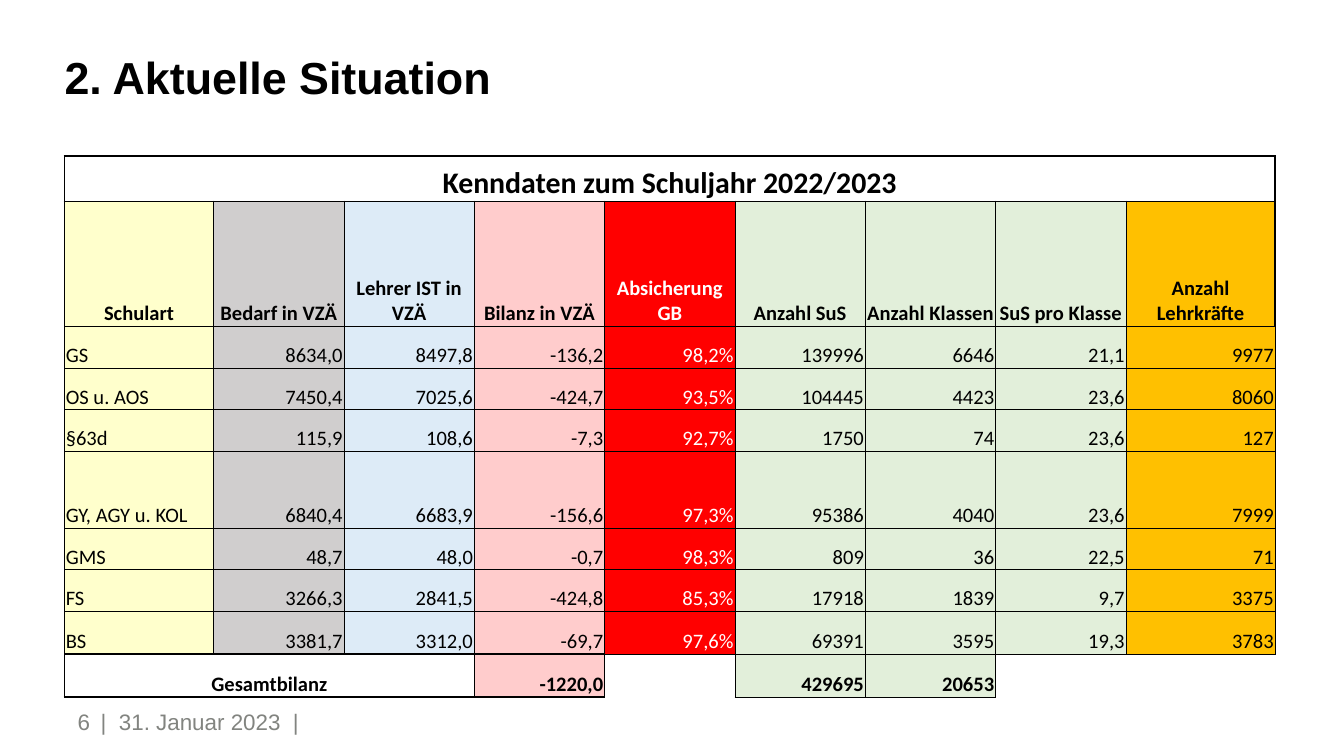
from lxml import etree
from pptx import Presentation
from pptx.dml.color import RGBColor
from pptx.enum import text
from pptx.oxml.ns import qn
from pptx.util import Inches, Pt

BLACK = RGBColor(0x00, 0x00, 0x00)
WHITE = RGBColor(0xFF, 0xFF, 0xFF)
GRAY = RGBColor(0x82, 0x84, 0x80)
CREAM = RGBColor(0xFF, 0xFF, 0xCC)
SILVER = RGBColor(0xD0, 0xCE, 0xCE)
BLUE = RGBColor(0xDD, 0xEB, 0xF7)
PINK = RGBColor(0xFF, 0xCC, 0xCC)
RED = RGBColor(0xFF, 0x00, 0x00)
GREEN = RGBColor(0xE2, 0xEF, 0xDA)
GOLD = RGBColor(0xFF, 0xC0, 0x00)

LEFT, MID, RIGHT = (text.PP_ALIGN.LEFT, text.PP_ALIGN.CENTER,
                    text.PP_ALIGN.RIGHT)
BOTTOM = text.MSO_ANCHOR.BOTTOM
MIDDLE = text.MSO_ANCHOR.MIDDLE


def write(frame, words, face, size, color, bold, align):
    """Set the text of a frame and format its run."""
    frame.text = words
    par = frame.paragraphs[0]
    par.alignment = align
    for run in par.runs:
        run.font.name = face
        run.font.size = Pt(size)
        run.font.color.rgb = color
        run.font.bold = bold


def edge(cell, sides):
    """Draw cell borders; sides maps L, R, T, B to a width in points."""
    props = cell._tc.get_or_add_tcPr()
    for side in "LRTB":
        line = etree.SubElement(props, qn("a:ln" + side))
        if not sides[side]:
            etree.SubElement(line, qn("a:noFill"))
            continue
        line.set("w", str(int(Pt(sides[side]))))
        fill = etree.SubElement(line, qn("a:solidFill"))
        etree.SubElement(fill, qn("a:srgbClr"), val=str(BLACK))


# Slide in 16:9
prs = Presentation()
prs.slide_width = Inches(10)
prs.slide_height = Inches(10 * 9 / 16)
slide = prs.slides.add_slide(prs.slide_layouts[6])

# Title and footer
labels = [
    ("2. Aktuelle Situation", 0.48, 0.36, 7.28, 0.41, 24, BLACK, True, LEFT, BOTTOM),
    ("|  31. Januar 2023  |", 0.75, 5.11, 4.96, 0.52, 12, GRAY, False, LEFT, MIDDLE),
    ("6", 0, 5.11, 0.67, 0.52, 12, GRAY, False, RIGHT, MIDDLE),
]
for words, x, y, w, h, size, color, bold, align, anchor in labels:
    box = slide.shapes.add_textbox(Inches(x), Inches(y), Inches(w), Inches(h))
    frame = box.text_frame
    frame.word_wrap = True
    frame.vertical_anchor = anchor
    frame.margin_left = frame.margin_right = 0
    frame.margin_top = frame.margin_bottom = 0
    write(frame, words, "Arial", size, color, bold, align)

# Table data
rows = [
    ["Kenndaten zum Schuljahr 2022/2023"] + [""] * 8,
    ["Schulart", "Bedarf in VZÄ", "Lehrer IST in VZÄ", "Bilanz in VZÄ",
     "Absicherung GB", "Anzahl SuS", "Anzahl Klassen", "SuS pro Klasse",
     "Anzahl Lehrkräfte"],
    ["GS", "8634,0", "8497,8", "-136,2", "98,2%", "139996", "6646", "21,1", "9977"],
    ["OS u. AOS", "7450,4", "7025,6", "-424,7", "93,5%", "104445", "4423", "23,6", "8060"],
    ["§63d", "115,9", "108,6", "-7,3", "92,7%", "1750", "74", "23,6", "127"],
    ["GY, AGY u. KOL", "6840,4", "6683,9", "-156,6", "97,3%", "95386", "4040", "23,6", "7999"],
    ["GMS", "48,7", "48,0", "-0,7", "98,3%", "809", "36", "22,5", "71"],
    ["FS", "3266,3", "2841,5", "-424,8", "85,3%", "17918", "1839", "9,7", "3375"],
    ["BS", "3381,7", "3312,0", "-69,7", "97,6%", "69391", "3595", "19,3", "3783"],
    ["Gesamtbilanz", "", "", "-1220,0", "", "429695", "20653", "", ""],
]
fills = [CREAM, SILVER, BLUE, PINK, RED, GREEN, GREEN, GREEN, GOLD]
wide = [1.11] + [0.97] * 7 + [1.11]
high = [0.34, 0.93, 0.31, 0.31, 0.31, 0.57, 0.31, 0.31, 0.32, 0.32]
last = len(rows) - 1

# Table grid, without a preset style
shape = slide.shapes.add_table(len(rows), len(wide), Inches(0.48), Inches(1.16),
                               Inches(sum(wide)), Inches(sum(high)))
table = shape.table
table.first_row = table.horz_banding = False
style = table._tbl.tblPr.find(qn("a:tableStyleId"))
style.text = "{2D5ABB26-0587-4C30-8999-92F81FD0307C}"
for col, w in zip(table.columns, wide):
    col.width = Inches(w)
for row, h in zip(table.rows, high):
    row.height = Inches(h)
table.cell(0, 0).merge(table.cell(0, 8))
table.cell(last, 0).merge(table.cell(last, 2))

# Cells
for r, row in enumerate(rows):
    for c, words in enumerate(row):
        cell = table.cell(r, c)
        cell.vertical_anchor = BOTTOM
        cell.margin_left = cell.margin_right = cell.margin_top = Inches(0.01)
        cell.margin_bottom = 0

        # Heavy lines frame the heading rows and the balance
        sides = dict.fromkeys("LRTB", 0.5)
        if r <= 2 or (r == last and c < 4):
            sides["T"] = 1
        if r <= 1 or (r >= last - 1 and c < 4):
            sides["B"] = 1
        if c == 0 and r in (0, 1, last):
            sides["L"] = 1
        if (c == 8 and r <= 1) or r == 0 or (r == last and c == 3):
            sides["R"] = 1
        blank = r == last and c in (4, 7, 8)
        if blank:
            sides["B"] = 0
            sides["L"] = {4: 1, 7: 0.5, 8: 0}[c]
            sides["R"] = 0.5 if c == 4 else 0
        edge(cell, sides)

        if r == 0 or blank or (r == last and c < 3):
            cell.fill.background()
        else:
            cell.fill.solid()
            cell.fill.fore_color.rgb = fills[c]

        if words:
            align = RIGHT if c else LEFT
            if r <= 1 or words == "Gesamtbilanz":
                align = MID
            color = WHITE if c == 4 else BLACK
            write(cell.text_frame, words, "Calibri", 11 if r else 16, color,
                  r in (0, 1, last), align)

prs.save("out.pptx")
